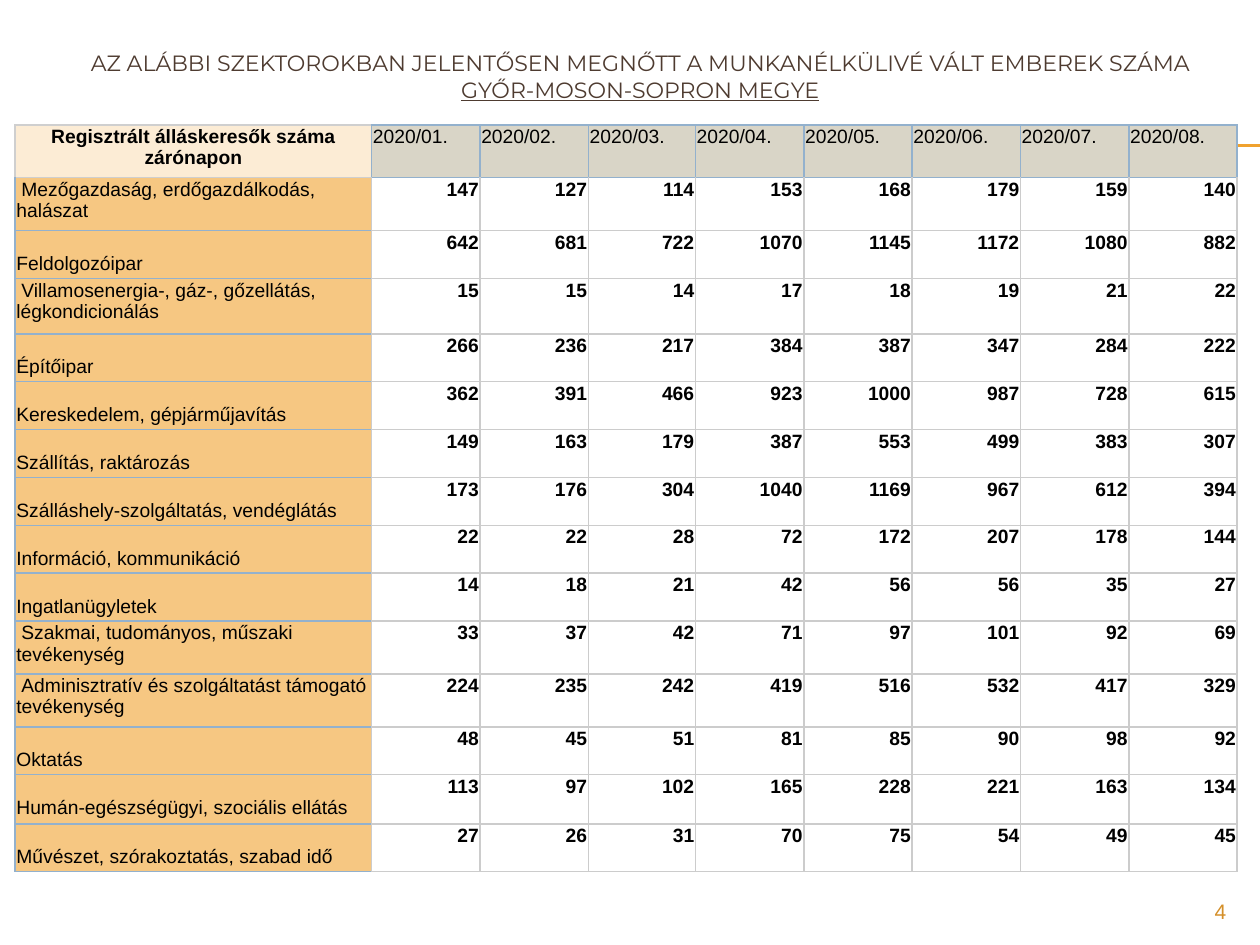
import dataclasses

import pptx
import pptx.dml.color
import pptx.enum.shapes
import pptx.enum.text
import pptx.oxml
import pptx.oxml.ns
import pptx.util
from pptx.util import Inches

ALIGN = pptx.enum.text.PP_ALIGN
ANCHOR = pptx.enum.text.MSO_ANCHOR


@dataclasses.dataclass(frozen=True)
class Theme:
    title_font: str = "Montserrat"
    body_font: str = "Arial"
    title_size: float = 12.6
    table_size: float = 11
    number_size: float = 12
    title: str = "4E3B30"
    text: str = "000000"
    number: str = "D48F29"
    rule: str = "F0A22E"
    corner: str = "FCECD5"
    month: str = "D9D5C7"
    sector: str = "F6C782"
    grid: str = "CCCCCC"
    corner_edge: str = "CFCFCF"
    blue_edge: str = "93B1CD"


THEME = Theme()

TITLE_LINES = (
    "AZ ALÁBBI SZEKTOROKBAN JELENTŐSEN MEGNŐTT A MUNKANÉLKÜLIVÉ VÁLT EMBEREK SZÁMA",
    "GYŐR-MOSON-SOPRON MEGYE",
)
CORNER_LABEL = "Regisztrált álláskeresők száma zárónapon"
MONTHS = [f"2020/{month:02d}." for month in range(1, 9)]
SECTORS = [
    ("Mezőgazdaság, erdőgazdálkodás, halászat", 0.42, (147, 127, 114, 153, 168, 179, 159, 140)),
    ("Feldolgozóipar", 0.38, (642, 681, 722, 1070, 1145, 1172, 1080, 882)),
    ("Villamosenergia-, gáz-, gőzellátás, légkondicionálás", 0.44, (15, 15, 14, 17, 18, 19, 21, 22)),
    ("Építőipar", 0.38, (266, 236, 217, 384, 387, 347, 284, 222)),
    ("Kereskedelem, gépjárműjavítás", 0.38, (362, 391, 466, 923, 1000, 987, 728, 615)),
    ("Szállítás, raktározás", 0.38, (149, 163, 179, 387, 553, 499, 383, 307)),
    ("Szálláshely-szolgáltatás, vendéglátás", 0.38, (173, 176, 304, 1040, 1169, 967, 612, 394)),
    ("Információ, kommunikáció", 0.38, (22, 22, 28, 72, 172, 207, 178, 144)),
    ("Ingatlanügyletek", 0.38, (14, 18, 21, 42, 56, 56, 35, 27)),
    ("Szakmai, tudományos, műszaki tevékenység", 0.42, (33, 37, 42, 71, 97, 101, 92, 69)),
    ("Adminisztratív és szolgáltatást támogató tevékenység", 0.42, (224, 235, 242, 419, 516, 532, 417, 329)),
    ("Oktatás", 0.38, (48, 45, 51, 81, 85, 90, 98, 92)),
    ("Humán-egészségügyi, szociális ellátás", 0.39, (113, 97, 102, 165, 228, 221, 163, 134)),
    ("Művészet, szórakoztatás, szabad idő", 0.38, (27, 26, 31, 70, 75, 54, 49, 45)),
]
TWO_LINE_HEIGHT = 0.42
HEADER_HEIGHT = 0.42
COLUMN_WIDTHS = [2.83, 0.86, 0.86, 0.85, 0.86, 0.86, 0.86, 0.86, 0.86]


def rgb(color):
    return pptx.dml.color.RGBColor.from_string(color)


def style_runs(para, font, size, color, bold=False):
    for span in para.runs:
        span.font.name = font
        span.font.size = pptx.util.Pt(size)
        span.font.color.rgb = rgb(color)
        span.font.bold = bold


def add_rule(page, top):
    rule = page.shapes.add_connector(
        pptx.enum.shapes.MSO_CONNECTOR.STRAIGHT,
        Inches(0.56), Inches(top), Inches(10), Inches(top))
    rule.line.color.rgb = rgb(THEME.rule)
    rule.line.width = pptx.util.Pt(0.75)
    pptx.oxml.ns.qn("a:effectLst")
    rule._element.spPr.append(pptx.oxml.parse_xml(
        f'<a:effectLst {pptx.oxml.ns.nsdecls("a")}/>'))


def add_text(page, place, text, font, size, color, align, anchor):
    box = page.shapes.add_textbox(*(Inches(length) for length in place))
    box.text_frame.word_wrap = True
    box.text_frame.vertical_anchor = anchor
    para = box.text_frame.paragraphs[0]
    para.text = text
    para.alignment = align
    style_runs(para, font, size, color)
    return para


def set_borders(cell, left, top, right, bottom):
    properties = cell._tc.get_or_add_tcPr()
    edges = zip(("lnL", "lnR", "lnT", "lnB"), (left, right, top, bottom))
    for position, (tag, color) in enumerate(edges):
        properties.insert(position, pptx.oxml.parse_xml(
            f'<a:{tag} {pptx.oxml.ns.nsdecls("a")} w="12700"><a:solidFill>'
            f'<a:srgbClr val="{color}"/></a:solidFill></a:{tag}>'))


def fill_cell(cell, text, align, borders, fill=None, bold=False):
    cell.margin_left = cell.margin_right = cell.margin_top = Inches(0.01)
    cell.margin_bottom = 0
    cell.vertical_anchor = ANCHOR.TOP
    if fill:
        cell.fill.solid()
        cell.fill.fore_color.rgb = rgb(fill)
    else:
        cell.fill.background()
    set_borders(cell, *borders)
    para = cell.text_frame.paragraphs[0]
    para.text = text
    para.alignment = align
    style_runs(para, THEME.body_font, THEME.table_size, THEME.text, bold)
    return para


def fill_header(table):
    edge, blue = THEME.corner_edge, THEME.blue_edge
    fill_cell(table.cell(0, 0), CORNER_LABEL, ALIGN.CENTER,
              (edge, edge, blue, edge), THEME.corner, True)
    for column, month in enumerate(MONTHS, 1):
        fill_cell(table.cell(0, column), month, ALIGN.LEFT, (blue,) * 4, THEME.month)


def fill_sector(table, row, label, height, values):
    grid, blue = THEME.grid, THEME.blue_edge
    first = row == 1
    cell = table.cell(row, 0)
    label_top = THEME.corner_edge if first else blue
    para = fill_cell(cell, label, ALIGN.LEFT, (blue, label_top, grid, blue), THEME.sector)
    if height >= TWO_LINE_HEIGHT:
        para._p.get_or_add_pPr().set("indent", str(Inches(0.04)))
    else:
        cell.margin_top = Inches(0.18)
    value_top = blue if first else grid
    for column, value in enumerate(values, 1):
        fill_cell(table.cell(row, column), str(value), ALIGN.RIGHT,
                  (grid, value_top, grid, grid), bold=True)


def add_jobseeker_table(page):
    heights = [HEADER_HEIGHT] + [height for _, height, _ in SECTORS]
    table = page.shapes.add_table(
        len(heights), len(COLUMN_WIDTHS), Inches(0.12), Inches(0.99),
        Inches(sum(COLUMN_WIDTHS)), Inches(sum(heights))).table
    table.horz_banding = False
    table.first_row = False
    for column, width in zip(table.columns, COLUMN_WIDTHS):
        column.width = Inches(width)
    for row, height in zip(table.rows, heights):
        row.height = Inches(height)
    fill_header(table)
    for row, sector in enumerate(SECTORS, 1):
        fill_sector(table, row, *sector)


def main():
    deck = pptx.Presentation()
    deck.slide_width, deck.slide_height = Inches(10), Inches(7.5)
    page = deck.slides.add_slide(deck.slide_layouts[6])
    for top in (1.15, 1.16):
        add_rule(page, top)
    title = add_text(page, (0.33, 0.21, 9.5, 0.79), "\v".join(TITLE_LINES),
                     THEME.title_font, THEME.title_size, THEME.title,
                     ALIGN.CENTER, ANCHOR.MIDDLE)
    title.runs[-1].font.underline = True
    add_text(page, (9, 7.08, 0.83, 0.27), "4", THEME.body_font,
             THEME.number_size, THEME.number, ALIGN.RIGHT, ANCHOR.TOP)
    add_jobseeker_table(page)
    deck.save("out.pptx")


if __name__ == "__main__":
    main()
